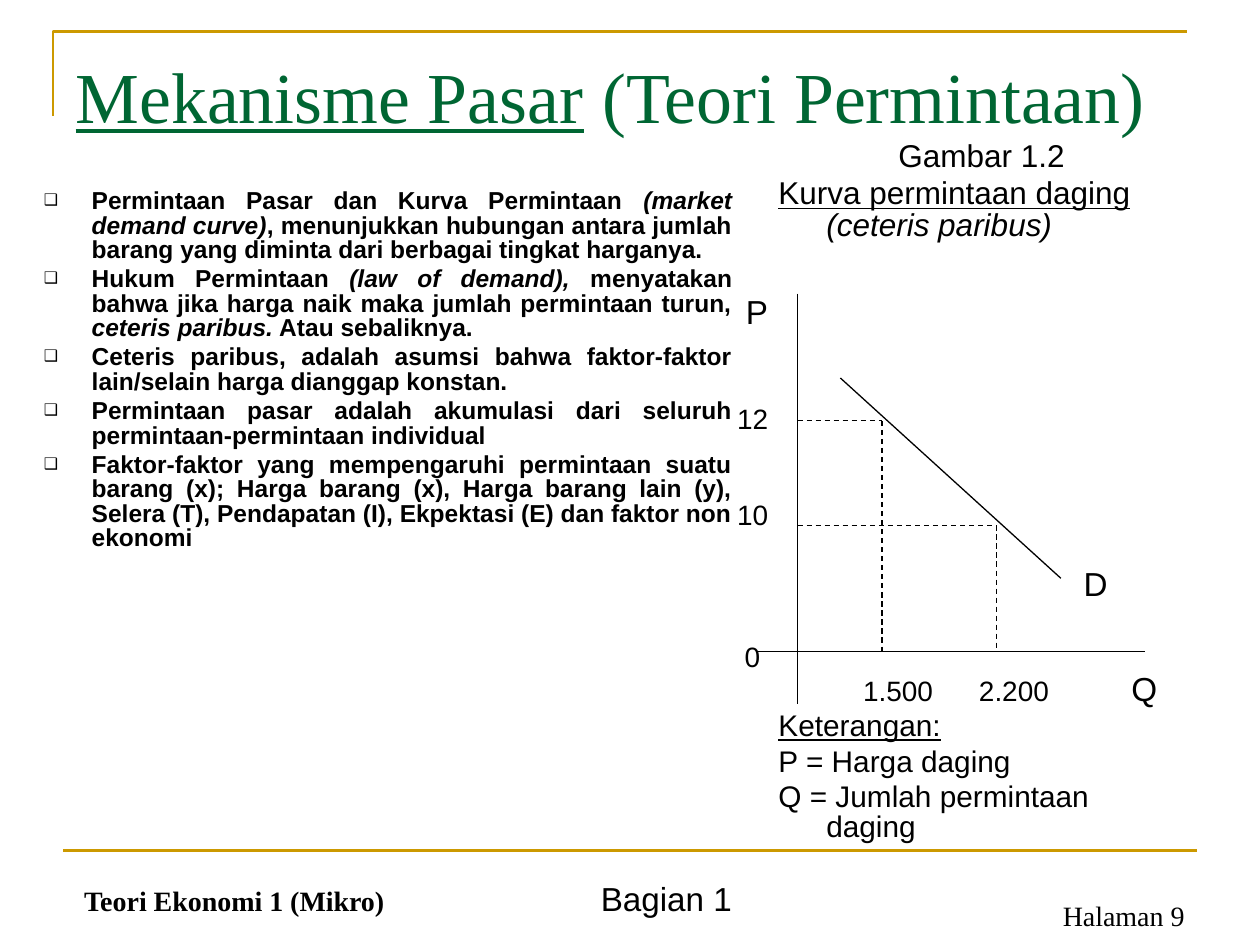
from dataclasses import dataclass

from lxml.etree import SubElement
from pptx import Presentation
from pptx.dml.color import RGBColor
from pptx.enum.dml import MSO_LINE
from pptx.enum.shapes import MSO_CONNECTOR
from pptx.enum.text import MSO_ANCHOR, PP_ALIGN
from pptx.oxml.ns import qn
from pptx.util import Inches, Pt


@dataclass(frozen=True)
class Theme:
    ink: RGBColor = RGBColor(0x00, 0x00, 0x00)
    green: RGBColor = RGBColor(0x00, 0x66, 0x33)
    gold: RGBColor = RGBColor(0xCC, 0x99, 0x00)
    sans: str = "Arial"
    serif: str = "Times New Roman"
    title: float = 41
    large: float = 19
    caption: float = 18
    legend: float = 17
    small: float = 16
    body: float = 14
    line_spacing: float = 0.83
    indent: float = 0.38
    rule: float = 1.5
    axis: float = 0.75


THEME = Theme()
ITALIC = {"italic": True}
UNDERLINE = {"underline": True}

TITLE = [("Mekanisme Pasar", UNDERLINE), (" (Teori Permintaan)", {})]
POINTS = [
    [("Permintaan Pasar dan Kurva Permintaan ", {}), ("(market demand curve)", ITALIC),
     (", menunjukkan hubungan antara jumlah barang yang diminta dari berbagai "
      "tingkat harganya.", {})],
    [("Hukum Permintaan ", {}), ("(law of demand), ", ITALIC),
     ("menyatakan bahwa jika harga naik maka jumlah permintaan turun, ", {}),
     ("ceteris paribus.", ITALIC), (" Atau sebaliknya.", {})],
    [("Ceteris paribus, adalah asumsi bahwa faktor-faktor lain/selain harga "
      "dianggap konstan.", {})],
    [("Permintaan pasar adalah akumulasi dari seluruh permintaan-permintaan "
      "individual", {})],
    [("Faktor-faktor yang mempengaruhi permintaan suatu barang (x); Harga barang (x), "
      "Harga barang lain (y), Selera (T), Pendapatan (I), Ekpektasi (E) dan faktor "
      "non ekonomi", {})],
]
CAPTION = [
    [("Gambar 1.2", {})],
    [("Kurva permintaan daging", UNDERLINE), (" ", {}), ("(ceteris paribus)", ITALIC)],
]
LEGEND = [
    [("Keterangan:", UNDERLINE)],
    [("P = Harga daging", {})],
    [("Q = Jumlah permintaan daging", {})],
]


def set_values(target, values):
    for name, value in values.items():
        setattr(target, name, value)


def add_runs(paragraph, runs, size, name=THEME.sans, color=THEME.ink, bold=False):
    for text, style in runs:
        run = paragraph.add_run()
        run.text = text
        set_values(run.font, {"size": Pt(size), "name": name, "bold": bold, **style})
        run.font.color.rgb = color


def add_text_frame(slide, box, **values):
    text_frame = slide.shapes.add_textbox(*map(Inches, box)).text_frame
    set_values(text_frame, {"word_wrap": True, **values})
    return text_frame


def add_line(slide, start, end, color=THEME.ink, width=THEME.axis, dashed=False):
    line = slide.shapes.add_connector(
        MSO_CONNECTOR.STRAIGHT, *map(Inches, (*start, *end)))
    line.line.color.rgb = color
    line.line.width = Pt(width)
    if dashed:
        line.line.dash_style = MSO_LINE.DASH
    SubElement(line._element.spPr, qn("a:effectLst"))


def add_bullet(paragraph):
    properties = paragraph._p.get_or_add_pPr()
    color = SubElement(properties, qn("a:buClr"))
    SubElement(color, qn("a:srgbClr"), val=str(THEME.ink))
    SubElement(properties, qn("a:buSzPct"), val="65000")
    SubElement(properties, qn("a:buFont"), typeface=THEME.sans)
    SubElement(properties, qn("a:buChar"), char="❑")


def add_hanging_text(slide, box, paragraphs, size, alignment=PP_ALIGN.LEFT,
                     bold=False, bulleted=False):
    """Write paragraphs with a hanging indent and return them."""
    text_frame = add_text_frame(slide, box)
    for index, runs in enumerate(paragraphs):
        paragraph = text_frame.add_paragraph() if index else text_frame.paragraphs[0]
        set_values(paragraph, {"alignment": alignment,
                               "line_spacing": THEME.line_spacing,
                               "space_before": Pt(0.2 * size if index else 0)})
        properties = paragraph._p.get_or_add_pPr()
        properties.set("marL", str(Inches(THEME.indent)))
        properties.set("indent", str(-Inches(THEME.indent)))
        if bulleted:
            add_bullet(paragraph)
        add_runs(paragraph, runs, size, bold=bold)
    return text_frame.paragraphs


def add_label(slide, left, middle, text, size):
    """Write one line that starts at left and is centred on the height middle."""
    height = 0.4
    text_frame = add_text_frame(
        slide, (left, middle - height / 2, 0.8, height), word_wrap=False,
        margin_left=0, margin_right=0, margin_top=0, margin_bottom=0,
        vertical_anchor=MSO_ANCHOR.MIDDLE)
    add_runs(text_frame.paragraphs[0], [(text, {})], size)


def add_frame(slide, box):
    """Draw the corner rule at the top and the rule above the footer."""
    left, top, width, height = box
    builder = slide.shapes.build_freeform(Inches(left), Inches(top + 0.67))
    builder.add_line_segments(
        [(Inches(left), Inches(top)), (Inches(left + width), Inches(top))], close=False)
    corner = builder.convert_to_shape()
    corner.shadow.inherit = False
    corner.fill.background()
    corner.line.color.rgb = THEME.gold
    corner.line.width = Pt(THEME.rule)
    bottom = top + height
    add_line(slide, (0.5, bottom), (9.5, bottom), THEME.gold, THEME.rule)


def add_title(slide, box):
    title = slide.shapes.title
    set_values(title, dict(zip(("left", "top", "width", "height"), map(Inches, box))))
    set_values(title.text_frame, {"vertical_anchor": MSO_ANCHOR.TOP, "word_wrap": True,
                                  "margin_top": Inches(0.11)})
    paragraph = title.text_frame.paragraphs[0]
    paragraph.alignment = PP_ALIGN.LEFT
    add_runs(paragraph, TITLE, THEME.title, THEME.serif, THEME.green)


def add_demand_figure(slide, box):
    left, top, width, height = box
    caption = add_hanging_text(slide, (left, top, width, 1), CAPTION, THEME.caption)
    caption[0].alignment = PP_ALIGN.CENTER

    axis_x, axis_y = left + 0.25, top + 4.09
    add_line(slide, (axis_x, top + 1.25), (axis_x, axis_y + 0.42))
    add_line(slide, (axis_x - 0.33, axis_y), (axis_x + 2.76, axis_y))
    add_line(slide, (axis_x + 0.34, axis_y - 2.17), (axis_x + 2.09, axis_y - 0.58))

    for quantity, price in ((0.67, 1.83), (1.58, 1)):
        point = (axis_x + quantity, axis_y - price)
        add_line(slide, (axis_x, point[1]), point, dashed=True)
        add_line(slide, point, (point[0], axis_y), dashed=True)

    for x, y, text, size in (
        (-0.41, -2.7, "P", THEME.large),
        (-0.48, -1.85, "12", THEME.small),
        (-0.48, -1.09, "10", THEME.small),
        (-0.42, 0.04, "0", THEME.small),
        (0.52, 0.31, "1.500", THEME.small),
        (1.44, 0.31, "2.200", THEME.small),
        (2.65, 0.29, "Q", THEME.large),
        (2.27, -0.54, "D", THEME.large),
    ):
        add_label(slide, axis_x + x, axis_y + y, text, size)

    legend_top = top + 4.53
    add_hanging_text(slide, (left, legend_top, width, top + height - legend_top),
                     LEGEND, THEME.legend)


def add_footer(slide, box):
    left, top, width, height = box
    course = add_text_frame(slide, (left, top, 3.68, height),
                            vertical_anchor=MSO_ANCHOR.BOTTOM)
    add_runs(course.paragraphs[0], [("Teori Ekonomi 1 (Mikro)", {})],
             THEME.small, THEME.serif, bold=True)
    part = add_text_frame(slide, (4.67, top + 0.09, 2.08, 0.42))
    add_runs(part.paragraphs[0], [("Bagian 1", {})], THEME.large)
    page = add_text_frame(slide, (left + width - 2.33, top + 0.25, 2.33, 0.36))
    page.paragraphs[0].alignment = PP_ALIGN.RIGHT
    add_runs(page.paragraphs[0], [("Halaman 9", {})], THEME.small, THEME.serif)


def main():
    presentation = Presentation()
    presentation.slide_width, presentation.slide_height = Inches(10), Inches(7.5)
    slide = presentation.slides.add_slide(presentation.slide_layouts[5])
    add_frame(slide, (0.42, 0.25, 9, 6.5))
    add_title(slide, (0.5, 0.3, 9, 1.25))
    add_hanging_text(slide, (0.25, 1.46, 5.66, 5.29), POINTS, THEME.body,
                     PP_ALIGN.JUSTIFY, bold=True, bulleted=True)
    add_demand_figure(slide, (6.08, 1.08, 3.42, 5.67))
    add_footer(slide, (0.57, 6.83, 8.93, 0.5))
    presentation.save("out.pptx")


if __name__ == "__main__":
    main()
